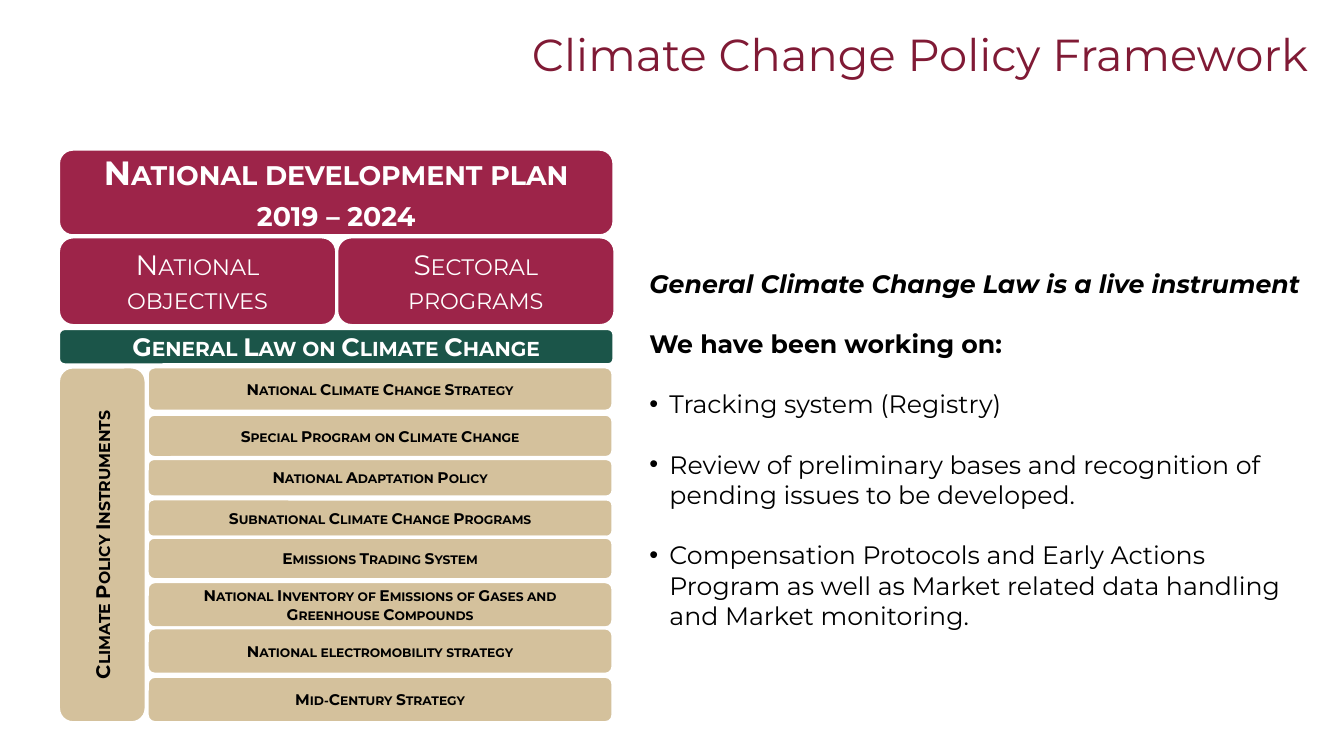
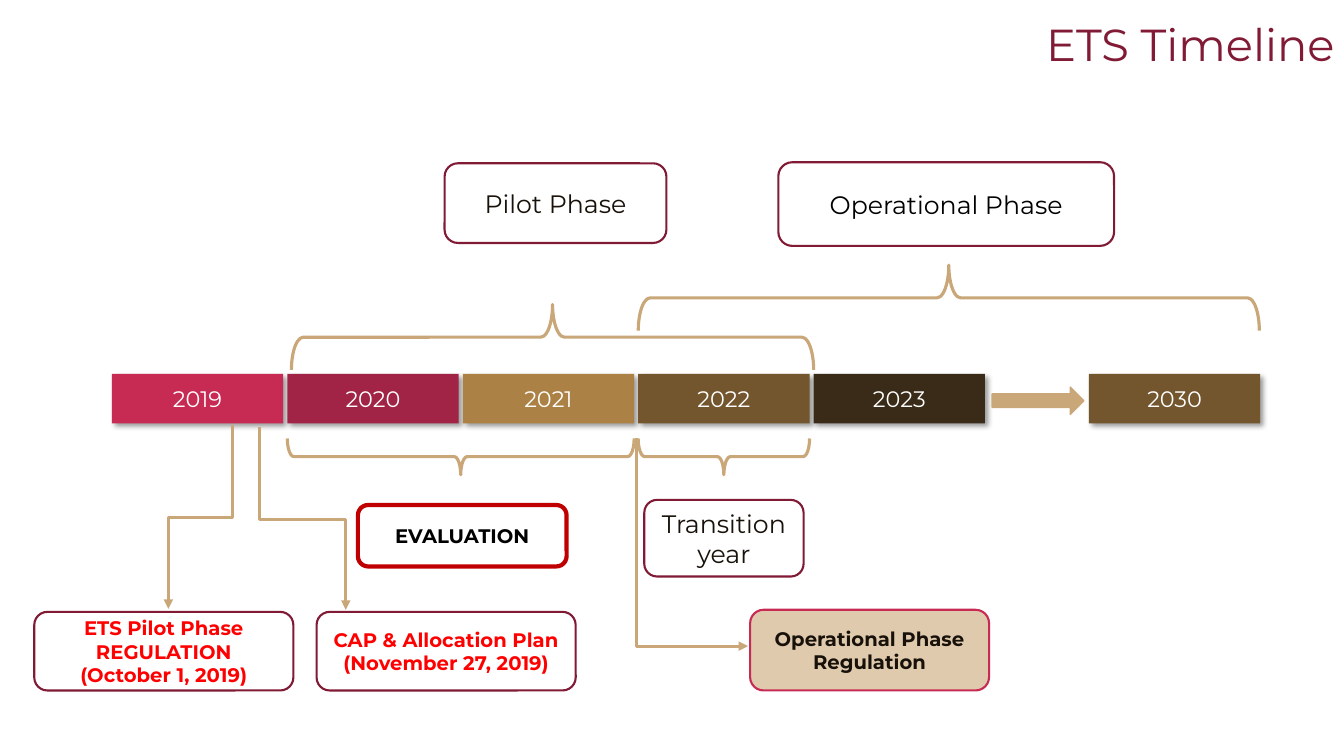
from lxml import etree
from pptx import Presentation
from pptx.dml.color import RGBColor
from pptx.enum.shapes import MSO_SHAPE
from pptx.enum.text import MSO_ANCHOR, MSO_AUTO_SIZE, PP_ALIGN
from pptx.oxml.ns import qn
from pptx.util import Pt

PX = 9144  # EMU per px, 100 px to the inch
FONT = "Montserrat"
ROUNDED, RECT = MSO_SHAPE.ROUNDED_RECTANGLE, MSO_SHAPE.RECTANGLE
BRACE, ARROW = MSO_SHAPE.LEFT_BRACE, MSO_SHAPE.RIGHT_ARROW
LEFT, CENTER, RIGHT = PP_ALIGN.LEFT, PP_ALIGN.CENTER, PP_ALIGN.RIGHT
TOP, MIDDLE = MSO_ANCHOR.TOP, MSO_ANCHOR.MIDDLE
TITLE_ONLY, TITLE_AND_BODY = 5, 1

WHITE = RGBColor(0xFF, 0xFF, 0xFF)
BLACK = RGBColor(0x00, 0x00, 0x00)
INK = RGBColor(0x17, 0x11, 0x09)
WINE = RGBColor(0x80, 0x1A, 0x35)
BURGUNDY = RGBColor(0x9D, 0x24, 0x49)
CRIMSON = RGBColor(0xA1, 0x23, 0x45)
ROSE = RGBColor(0xC7, 0x2B, 0x54)
GREEN = RGBColor(0x1B, 0x55, 0x49)
SAND = RGBColor(0xD4, 0xC1, 0x9C)
PALE_SAND = RGBColor(0xDF, 0xCA, 0xAE)
GOLD = RGBColor(0xC9, 0xA7, 0x78)
OCHRE = RGBColor(0xAC, 0x81, 0x45)
BROWN = RGBColor(0x73, 0x56, 0x2E)
DARK_BROWN = RGBColor(0x39, 0x2B, 0x17)
RED = RGBColor(0xFF, 0x00, 0x00)
DARK_RED = RGBColor(0xC0, 0x00, 0x00)

# Content: policy framework (box = left, top, width, height)
POLICY_TITLE = ("Climate Change Policy Framework", (388, -2, 915, 118))
LAW_BOX = (639, 261, 657, 377)
LAW_INTRO = [
    ("General Climate Change Law is a live instrument", {"bold": True, "italic": True}),
    ("We have been working on:", {"bold": True}),
]
LAW_WORK = [
    "Tracking system (Registry)",
    "Review of preliminary bases and recognition of pending issues to be developed.",
    "Compensation Protocols and Early Actions Program as well as Market related "
    "data handling and Market monitoring.",
]
POLICY_LEVELS = [  # lines, box, fill, size, bold
    (["National development plan", "2019 – 2024"], (58, 148, 551, 86), BURGUNDY, 24, True),
    (["National objectives"], (58, 235, 276, 88), BURGUNDY, 20, False),
    (["Sectoral programs"], (334, 235, 276, 88), BURGUNDY, 20, False),
    (["General Law on Climate Change"], (58, 326, 551, 36), GREEN, 18, True),
]
INSTRUMENTS_LABEL = ("Climate Policy Instruments", (58, 364, 87, 353))
INSTRUMENTS_LEFT, INSTRUMENTS_WIDTH = 146, 462
INSTRUMENTS = [  # text, top, height
    ("National Climate Change Strategy", 364, 44),
    ("Special Program on Climate Change", 411, 43),
    ("National Adaptation Policy", 455, 38),
    ("Subnational Climate Change Programs", 495, 38),
    ("Emissions Trading System", 533, 42),
    ("National Inventory of Emissions of Gases and Greenhouse Compounds", 577, 46),
    ("National electromobility strategy", 623, 46),
    ("Mid-Century Strategy", 671, 46),
]

# Content: timeline
TIMELINE_TITLE = ("ETS Timeline", (448, 15, 881, 63))
YEAR_LEFT, YEAR_TOP, YEAR_STEP, YEAR_WIDTH, YEAR_HEIGHT = 111, 371, 174, 170, 49
YEARS = [("2019", ROSE), ("2020", CRIMSON), ("2021", OCHRE), ("2022", BROWN),
         ("2023", DARK_BROWN)]
LAST_YEAR, LAST_YEAR_LEFT = ("2030", BROWN), 1080
YEARS_ARROW = (984, 384, 91, 27)
PHASES = [  # lines, box, fill, outline, outline width, size, bold, text colour
    (["Operational Phase"], (772, 161, 333, 83), WHITE, WINE, 1.5, 18, False, BLACK),
    (["Pilot Phase"], (441, 162, 220, 79), WHITE, WINE, 1.5, 18, False, INK),
    (["Transition year"], (639, 496, 158, 76), WHITE, WINE, 1.5, 18, False, INK),
    (["EVALUATION"], (355, 501, 207, 61), WHITE, DARK_RED, 3, 14, True, BLACK),
    (["ETS Pilot Phase REGULATION", "(October 1, 2019)"], (34, 607, 257, 78),
     WHITE, WINE, 1.5, 14, True, RED),
    (["CAP & Allocation Plan", "(November 27, 2019)"], (314, 607, 257, 78),
     WHITE, WINE, 1.5, 14, True, RED),
    (["Operational Phase Regulation"], (744, 605, 237, 80),
     PALE_SAND, ROSE, 1.5, 14, True, INK),
]
SPANS = [  # box, turn: 90 points up, 270 points down
    ((633, 263, 616, 65), 90),
    ((289, 302, 518, 65), 90),
    ((285, 435, 344, 36), 270),
    ((633, 435, 170, 36), 270),
]
MILESTONES = [  # corner points of each arrow
    [(231, 422), (231, 513), (167, 513), (167, 604)],
    [(257, 424), (257, 515), (343, 515), (343, 605)],
    [(631, 435), (631, 641), (742, 641)],
]


def add_xml(parent, tag, **attributes):
    return etree.SubElement(parent, qn(tag), attributes)


def write(frame, lines, size=18, color=BLACK, bold=False, italic=False, small_caps=False,
          align=CENTER, anchor=MIDDLE, inset=(5, 5), spacing=None, gap=0):
    """Fill a text frame; a line is text or (text, overrides)."""
    frame.word_wrap, frame.auto_size = True, MSO_AUTO_SIZE.NONE
    frame.vertical_anchor = anchor
    frame.margin_left = frame.margin_right = inset[0] * PX
    frame.margin_top = frame.margin_bottom = inset[1] * PX
    for index, line in enumerate(lines):
        text, own = (line, {}) if isinstance(line, str) else line
        paragraph = frame.add_paragraph() if index else frame.paragraphs[0]
        if "bullet" in own:
            properties = paragraph._p.get_or_add_pPr()
            indent = 20 * PX if own["bullet"] else 0
            properties.set("marL", str(indent))
            properties.set("indent", str(-indent))
            if own["bullet"]:
                add_xml(properties, "a:buFont", typeface="Arial")
                add_xml(properties, "a:buChar", char=own["bullet"])
            else:
                add_xml(properties, "a:buNone")
        paragraph.alignment = align
        paragraph.space_before = Pt(gap if index else 0)
        if spacing:
            paragraph.line_spacing = spacing
        run = paragraph.add_run()
        run.text = text
        font = run.font
        font.name, font.size, font.color.rgb = FONT, Pt(size), color
        font.bold = own.get("bold", bold)
        font.italic = own.get("italic", italic)
        if small_caps:
            run._r.get_or_add_rPr().set("cap", "small")


def place(shape, box):
    shape.left, shape.top, shape.width, shape.height = (round(v * PX) for v in box)


def add_block(slide, kind, box, fill=None, outline=None, outline_width=1.0, turn=0):
    """Add a preset shape that covers box after a quarter turn, if any."""
    if turn:
        left, top, width, height = box
        box = (left + (width - height) / 2, top + (height - width) / 2, height, width)
    block = slide.shapes.add_shape(kind, *(round(v * PX) for v in box))
    block.rotation = turn
    block.shadow.inherit = False
    if fill is None:
        block.fill.background()
    else:
        block.fill.solid()
        block.fill.fore_color.rgb = fill
    if outline is None:
        block.line.fill.background()
    else:
        block.line.color.rgb = outline
        block.line.width = Pt(outline_width)
    return block


def add_year(slide, year, fill, left):
    block = add_block(slide, RECT, (left, YEAR_TOP, YEAR_WIDTH, YEAR_HEIGHT), fill)
    effects = block._element.spPr.find(qn("a:effectLst"))
    shadow = add_xml(effects, "a:outerShdw", blurRad=str(Pt(4)), dist=str(Pt(3)),
                     dir="2700000", algn="tl", rotWithShape="0")
    shade = add_xml(shadow, "a:srgbClr", val=str(BLACK))
    add_xml(shade, "a:alpha", val="40000")
    write(block.text_frame, [year], size=16, color=WHITE)


def add_milestone(slide, points):
    builder = slide.shapes.build_freeform(*points[0], scale=PX)
    builder.add_line_segments(points[1:], close=False)
    milestone = builder.convert_to_shape()
    milestone.shadow.inherit = False
    milestone.fill.background()
    milestone.line.color.rgb = GOLD
    milestone.line.width = Pt(2.25)
    add_xml(milestone._element.spPr.find(qn("a:ln")), "a:tailEnd", type="triangle")


def add_slide(deck, layout, title):
    slide = deck.slides.add_slide(deck.slide_layouts[layout])
    text, box = title
    place(slide.shapes.title, box)
    write(slide.shapes.title.text_frame, [text], size=32, color=WINE, align=RIGHT,
          spacing=0.9)
    return slide


def build_policy(deck):
    slide = add_slide(deck, TITLE_AND_BODY, POLICY_TITLE)

    # Work on the law
    law = slide.placeholders[1]
    place(law, LAW_BOX)
    intro = [(text, {**style, "bullet": ""}) for text, style in LAW_INTRO]
    work = [(text, {"bullet": "•"}) for text in LAW_WORK]
    write(law.text_frame, intro + work, align=LEFT, anchor=TOP, gap=21.5)

    # Levels of policy, then the instruments
    label, label_box = INSTRUMENTS_LABEL
    instruments = [([text], (INSTRUMENTS_LEFT, top, INSTRUMENTS_WIDTH, height), SAND, 11, True)
                   for text, top, height in INSTRUMENTS]
    for lines, box, fill, size, bold in POLICY_LEVELS + instruments:
        block = add_block(slide, ROUNDED, box, fill, WHITE, 2.25)
        write(block.text_frame, lines, size=size, bold=bold, small_caps=True, inset=(14, 0),
              color=BLACK if fill == SAND else WHITE)
    side = add_block(slide, ROUNDED, label_box, SAND, WHITE, 2.25, turn=270)
    write(side.text_frame, [label], size=14, bold=True, small_caps=True)


def build_timeline(deck):
    slide = add_slide(deck, TITLE_ONLY, TIMELINE_TITLE)

    # Years
    for index, (year, fill) in enumerate(YEARS):
        add_year(slide, year, fill, YEAR_LEFT + index * YEAR_STEP)
    add_year(slide, *LAST_YEAR, LAST_YEAR_LEFT)
    add_block(slide, ARROW, YEARS_ARROW, GOLD, GOLD)

    # Spans and milestones
    for box, turn in SPANS:
        brace = add_block(slide, BRACE, box, None, GOLD, 2.25, turn)
        brace.adjustments[0] = 0.18
    for points in MILESTONES:
        add_milestone(slide, points)

    # Phases and regulations
    for lines, box, fill, outline, width, size, bold, color in PHASES:
        block = add_block(slide, ROUNDED, box, fill, outline, width)
        write(block.text_frame, lines, size=size, bold=bold, color=color, inset=(8, 0))


def main():
    deck = Presentation()
    deck.slide_width, deck.slide_height = 1333 * PX, 750 * PX
    build_policy(deck)
    build_timeline(deck)
    deck.save("out.pptx")


if __name__ == "__main__":
    main()
